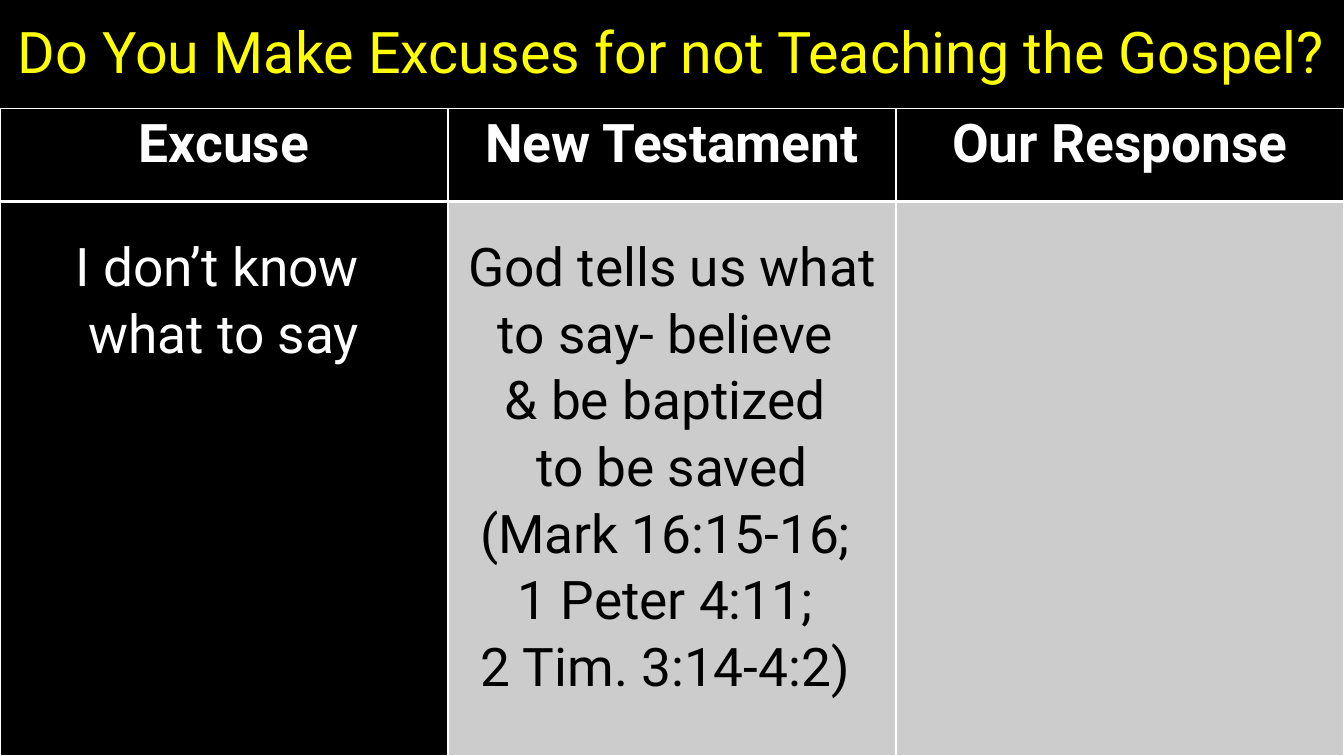
from pptx import Presentation, util as u
from pptx.dml.color import RGBColor
from pptx.enum import text
from pptx.oxml import ns
from lxml import etree

BLACK = RGBColor(0x00, 0x00, 0x00)
WHITE = RGBColor(0xFF, 0xFF, 0xFF)
YELLOW = RGBColor(0xFF, 0xFF, 0x00)
GREY = RGBColor(0xCC, 0xCC, 0xCC)

SLIDE_WIDTH, SLIDE_HEIGHT = 13.33, 7.5
TITLE_HEIGHT, HEADER_HEIGHT = 1.08, 0.92

HEADERS = ["Excuse", "New Testament", "Our Response"]
ANSWERS = [
    (["I don’t know ", "what to say"], WHITE, BLACK),
    (["God tells us what to say- believe ", "& be baptized ", "to be saved",
      "(Mark 16:15-16; ", "1 Peter 4:11; ", "2 Tim. 3:14-4:2) "], BLACK, GREY),
    ([], BLACK, GREY),
]


def write_lines(frame, lines, size, color, spacing, bold=False, font="Roboto"):
    """Put each line in its own centred paragraph."""
    for index, line in enumerate(lines):
        paragraph = frame.add_paragraph() if index else frame.paragraphs[0]
        paragraph.alignment = text.PP_ALIGN.CENTER
        paragraph.line_spacing = spacing
        run = paragraph.add_run()
        run.text = line
        run.font.name = font
        run.font.size = u.Pt(size)
        run.font.bold = bold
        run.font.color.rgb = color


class ExcuseSlide:
    def __init__(self, presentation):
        self.slide = presentation.slides.add_slide(presentation.slide_layouts[6])
        background = self.slide.background.fill
        background.solid()
        background.fore_color.rgb = BLACK

    def title(self, words):
        shape = self.slide.shapes.add_textbox(
            0, 0, u.Inches(SLIDE_WIDTH), u.Inches(TITLE_HEIGHT))
        frame = shape.text_frame
        frame.word_wrap = True
        frame.vertical_anchor = text.MSO_ANCHOR.MIDDLE
        write_lines(frame, [words], 41, YELLOW, 0.9)

    def border(self, cell, side, points):
        line = etree.SubElement(cell._tc.get_or_add_tcPr(), ns.qn(f"a:ln{side}"),
                                w=str(u.Pt(points)))
        fill = etree.SubElement(line, ns.qn("a:solidFill"))
        etree.SubElement(fill, ns.qn("a:srgbClr"), val=str(WHITE))

    def cell(self, cell, lines, color, fill, top, borders, bold=False):
        cell.margin_left = cell.margin_right = u.Inches(0.07)
        cell.margin_top, cell.margin_bottom = u.Inches(top), 0
        for side, points in zip("LRTB", borders):
            self.border(cell, side, points)
        cell.fill.solid()
        cell.fill.fore_color.rgb = fill
        write_lines(cell.text_frame, lines, 38, color, 1.07, bold)

    def table(self, headers, answers):
        height = SLIDE_HEIGHT - TITLE_HEIGHT
        table = self.slide.shapes.add_table(
            2, len(headers), 0, u.Inches(TITLE_HEIGHT),
            u.Inches(SLIDE_WIDTH), u.Inches(height)).table
        table.rows[0].height = u.Inches(HEADER_HEIGHT)
        table.rows[1].height = u.Inches(height - HEADER_HEIGHT)
        for column, (header, answer) in enumerate(zip(headers, answers)):
            self.cell(table.cell(0, column), [header], WHITE, BLACK,
                      top=0, borders=(1, 1, 1, 3), bold=True)
            self.cell(table.cell(1, column), *answer,
                      top=0.31, borders=(1, 1, 3, 1))


def main():
    presentation = Presentation()
    presentation.slide_width = u.Inches(SLIDE_WIDTH)
    presentation.slide_height = u.Inches(SLIDE_HEIGHT)
    slide = ExcuseSlide(presentation)
    slide.title("Do You Make Excuses for not Teaching the Gospel?")
    slide.table(HEADERS, ANSWERS)
    presentation.save("out.pptx")


if __name__ == "__main__":
    main()
